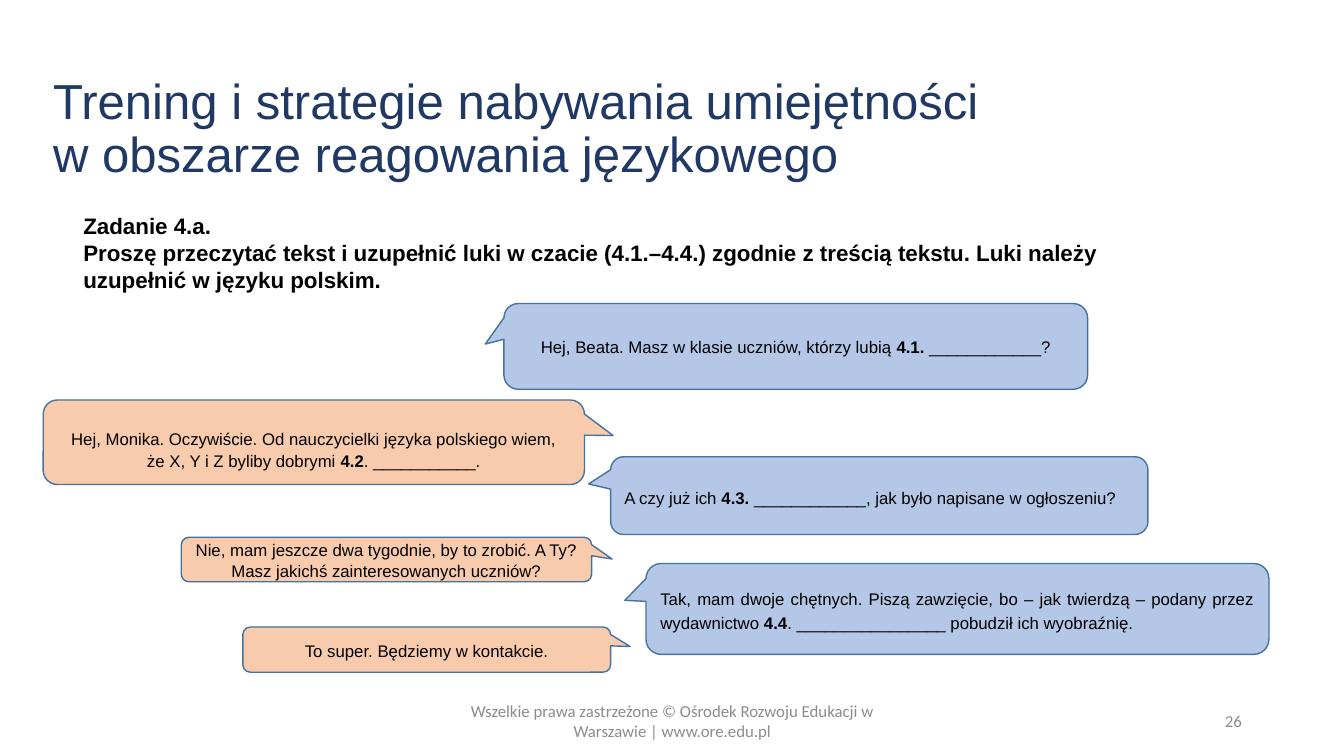
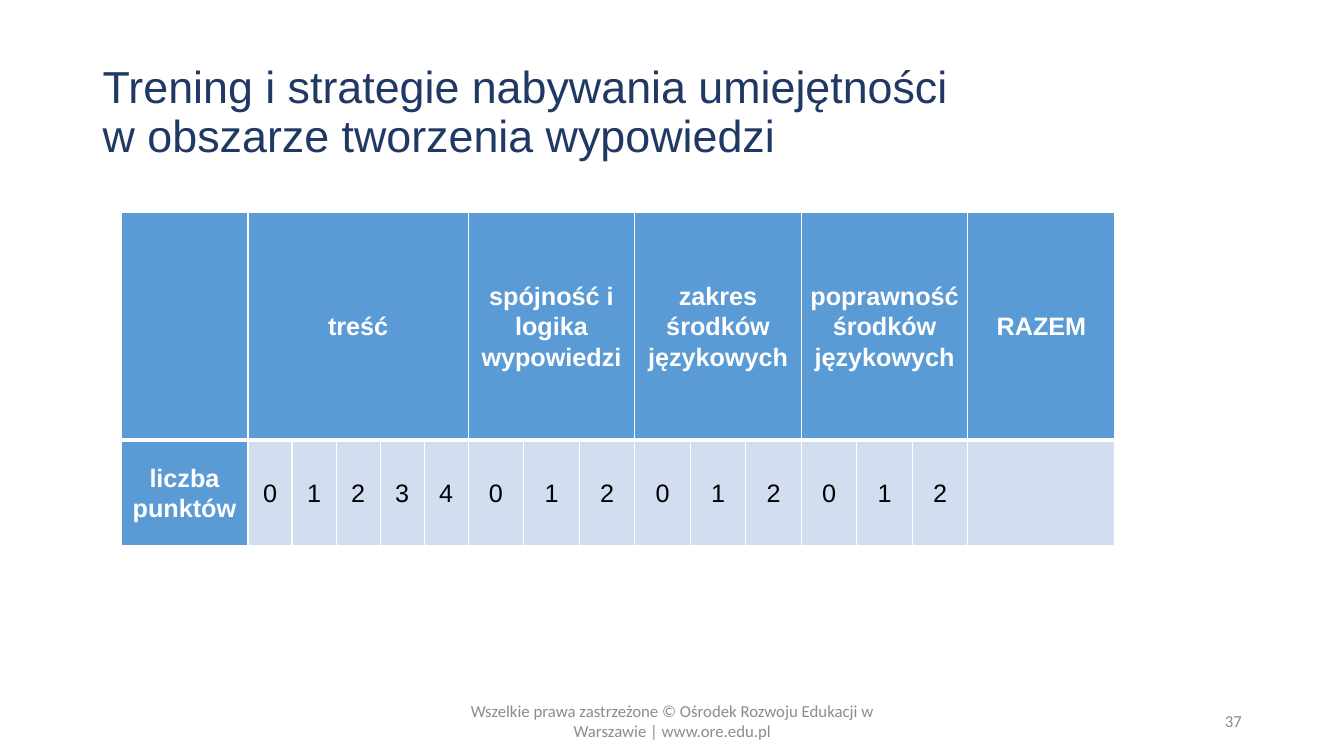
"""Build two training slides: a chat gap-fill task and a scoring table."""
from lxml.etree import SubElement
from pptx import Presentation
from pptx.dml.color import RGBColor
from pptx.enum.shapes import MSO_SHAPE
from pptx.enum.text import MSO_ANCHOR, PP_ALIGN
from pptx.oxml.ns import qn
from pptx.util import Cm, Pt

NAVY = RGBColor(0x20, 0x38, 0x64)
GREY = RGBColor(0x8C, 0x8C, 0x8C)
BLACK = RGBColor(0, 0, 0)
WHITE = RGBColor(0xFF, 0xFF, 0xFF)
BLUE = RGBColor(0xB4, 0xC7, 0xE7)
PEACH = RGBColor(0xF8, 0xCB, 0xAD)
OUTLINE = RGBColor(0x43, 0x73, 0x9E)
HEADER = RGBColor(0x5B, 0x9B, 0xD5)
BODY = RGBColor(0xD2, 0xDE, 0xEF)

CENTER, JUSTIFY = PP_ALIGN.CENTER, PP_ALIGN.JUSTIFY
FOOTER = "Wszelkie prawa zastrzeżone © Ośrodek Rozwoju Edukacji w Warszawie | www.ore.edu.pl"
TITLE = "Trening i strategie nabywania umiejętności"

TASK = [
    "Zadanie 4.a.",
    "Proszę przeczytać tekst i uzupełnić luki w czacie (4.1.–4.4.) zgodnie z treścią tekstu. "
    "Luki należy uzupełnić w języku polskim.",
]

# Text is split into plain, bold, plain parts
CHAT = [
    (BLUE, (12.7, 7.65, 14.71, 2.16), (-0.532, -0.027), CENTER, 1.07, 0.13,
     ("Hej, Beata. Masz w klasie uczniów, którzy lubią ", "4.1. ", "____________?")),
    (PEACH, (1.09, 10.08, 13.64, 2.13), (0.553, -0.079), CENTER, 1.07, 0.48,
     ("Hej, Monika. Oczywiście. Od nauczycielki języka polskiego wiem,\nże X, Y i Z byliby dobrymi ",
      "4.2", ". ___________.")),
    (BLUE, (15.39, 11.51, 13.54, 1.96), (-0.541, -0.15), JUSTIFY, 1.2, 0.13,
     ("A czy już ich ", "4.3. ", "____________, jak było napisane w ogłoszeniu?")),
    (PEACH, (4.57, 13.54, 10.34, 1.12), (0.55, -0.011), CENTER, 1.07, 0.13,
     ("Nie, mam jeszcze dwa tygodnie, by to zrobić. A Ty? Masz jakichś zainteresowanych uczniów?",)),
    (BLUE, (16.28, 14.2, 15.7, 2.29), (-0.534, -0.094), JUSTIFY, 1.2, 0.13,
     ("Tak, mam dwoje chętnych. Piszą zawzięcie, bo – jak twierdzą – podany przez wydawnictwo ",
      "4.4", ". ________________ pobudził ich wyobraźnię.")),
    (PEACH, (6.12, 15.8, 9.27, 1.14), (0.553, -0.068), CENTER, 1.07, 0.13,
     ("To super. Będziemy w kontakcie.",)),
]

CRITERIA = [
    ("", ["liczba punktów"], 3.2),
    ("treść", ["0", "1", "2", "3", "4"], 1.11),
    ("spójność i logika wypowiedzi", ["0", "1", "2"], 1.4),
    ("zakres środków językowych", ["0", "1", "2"], 1.4),
    ("poprawność środków językowych", ["0", "1", "2"], 1.4),
    ("RAZEM", [""], 3.71),
]
ROW_HEIGHTS = (5.72, 2.67)


def add_text(p, text, size, color, bold=False, font="Arial"):
    for i, line in enumerate(text.split("\n")):
        if i:
            p.add_line_break()
        r = p.add_run()
        r.text = line
        r.font.name, r.font.size, r.font.bold = font, Pt(size), bold
        r.font.color.rgb = color


def add_box(s, box, lines, size, color, bold=False, font="Arial",
            align=PP_ALIGN.LEFT, spacing=1.0, anchor=MSO_ANCHOR.MIDDLE):
    tf = s.shapes.add_textbox(*map(Cm, box)).text_frame
    tf.word_wrap = True
    tf.vertical_anchor = anchor
    for i, line in enumerate(lines):
        p = tf.add_paragraph() if i else tf.paragraphs[0]
        p.alignment, p.line_spacing = align, spacing
        add_text(p, line, size, color, bold, font)


def add_slide(prs, subtitle, title_box, title_size, number):
    s = prs.slides.add_slide(prs.slide_layouts[6])
    add_box(s, title_box, [f"{TITLE}\n{subtitle}"], title_size, NAVY, spacing=0.9)
    for text, left, width, align in ((FOOTER, 11.23, 11.43, CENTER),
                                     (number, 23.93, 7.62, PP_ALIGN.RIGHT)):
        add_box(s, (left, 17.65, width, 1.02), [text], 12, GREY, font="Calibri", align=align)
    return s


def add_bubble(s, fill, box, tail, align, spacing, top, parts):
    sp = s.shapes.add_shape(MSO_SHAPE.ROUNDED_RECTANGULAR_CALLOUT, *map(Cm, box))
    sp.shadow.inherit = False
    for i, value in enumerate((*tail, 0.167)):
        sp.adjustments[i] = value
    sp.fill.solid()
    sp.fill.fore_color.rgb = fill
    sp.line.color.rgb = OUTLINE
    sp.line.width = Pt(1)
    tf = sp.text_frame
    tf.word_wrap = True
    tf.vertical_anchor = MSO_ANCHOR.MIDDLE
    tf.margin_top = Cm(top)
    p = tf.paragraphs[0]
    p.alignment, p.line_spacing = align, spacing
    for i, part in enumerate(parts):
        add_text(p, part, 12, BLACK, bold=i == 1)


def set_borders(cell, widths):
    tcPr = cell._tc.get_or_add_tcPr()
    for i, (side, width) in enumerate(zip("LRTB", widths)):
        ln = SubElement(tcPr, qn(f"a:ln{side}"), w=str(Pt(width)))
        fill = SubElement(ln, qn("a:solidFill"))
        SubElement(fill, qn("a:srgbClr"), val=str(WHITE))
        tcPr.insert(i, ln)


def fill_cell(cell, text, is_head):
    p = cell.text_frame.paragraphs[0]
    p.alignment, p.line_spacing = CENTER, 1.07
    if text:
        add_text(p, text, 18, WHITE if is_head else BLACK, is_head)


def add_scores(s):
    widths = [width for _, points, width in CRITERIA for _ in points]
    table = s.shapes.add_table(2, len(widths), Cm(3.05), Cm(5.36),
                               Cm(sum(widths)), Cm(sum(ROW_HEIGHTS))).table
    for column, width in zip(table.columns, widths):
        column.width = Cm(width)
    for row, height in zip(table.rows, ROW_HEIGHTS):
        row.height = Cm(height)
    for y in range(2):
        for x in range(len(widths)):
            cell = table.cell(y, x)
            cell.fill.solid()
            cell.fill.fore_color.rgb = HEADER if y == 0 or x == 0 else BODY
            cell.vertical_anchor = MSO_ANCHOR.MIDDLE
            cell.margin_left = cell.margin_right = Cm(0.18)
            cell.margin_top = cell.margin_bottom = 0
            set_borders(cell, (1, 1, 1, 3) if y == 0 else (1, 1, 3, 1))
    x = 0
    for name, points, _ in CRITERIA:
        head = table.cell(0, x)
        if len(points) > 1:
            head.merge(table.cell(0, x + len(points) - 1))
        fill_cell(head, name, True)
        for point in points:
            fill_cell(table.cell(1, x), point, x == 0)
            x += 1


def main():
    prs = Presentation()
    prs.slide_width, prs.slide_height = Cm(33.87), Cm(19.05)

    s = add_slide(prs, "w obszarze reagowania językowego", (1.09, 1.45, 29.21, 3.68), 35.1, "26")
    add_box(s, (1.85, 5.23, 26.49, 2.31), TASK, 16, BLACK, bold=True, anchor=MSO_ANCHOR.TOP)
    for bubble in CHAT:
        add_bubble(s, *bubble)

    s = add_slide(prs, "w obszarze tworzenia wypowiedzi", (2.34, 1.02, 25.17, 3.68), 32, "37")
    add_scores(s)
    prs.save("out.pptx")


if __name__ == "__main__":
    main()
